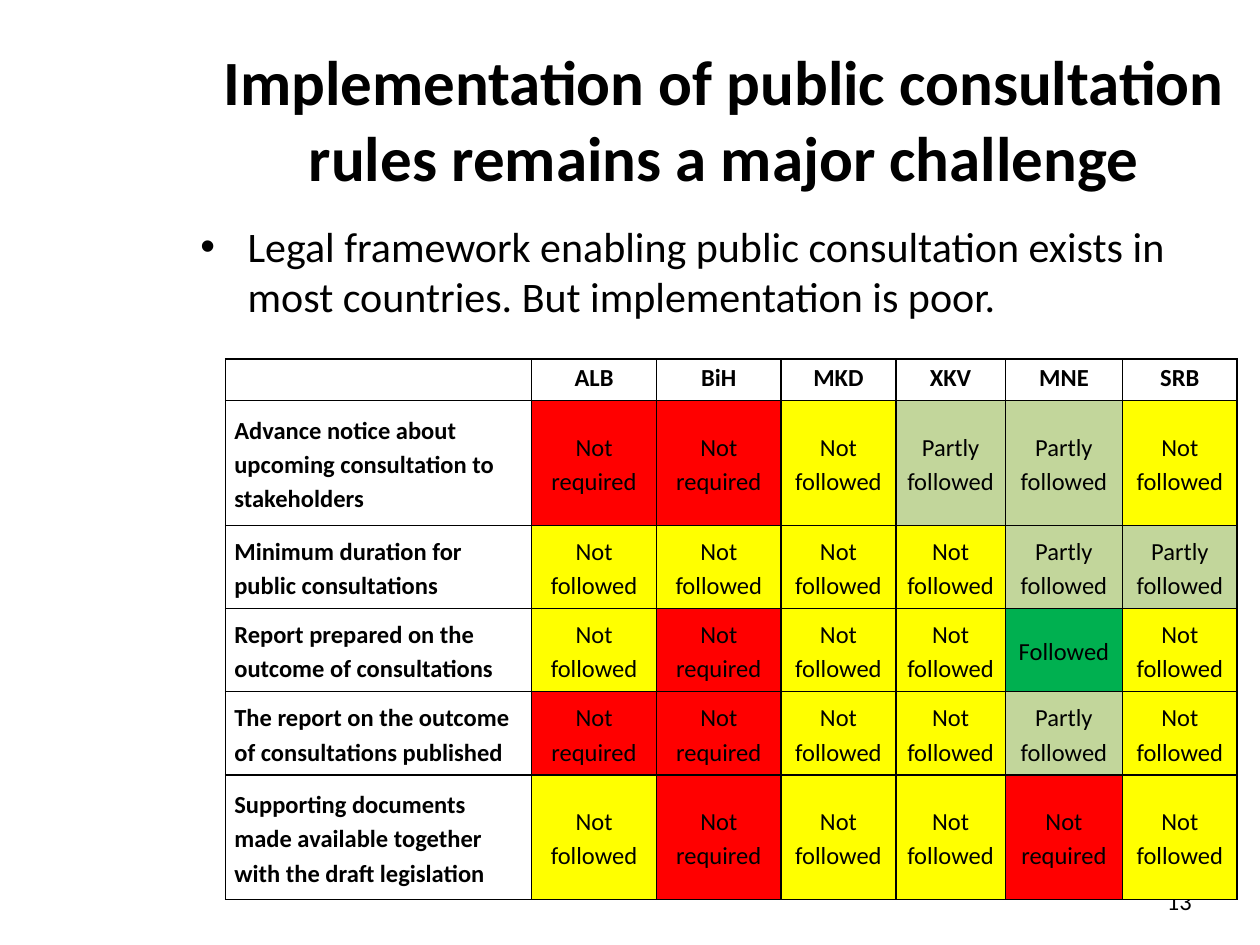
import lxml.etree
import pptx
import pptx.dml.color
import pptx.enum.text
import pptx.oxml.ns
import pptx.util

SCALE = 9144
FONT = "Calibri"
COLORS = {
    "text": "000000",
    "line": "000000",
    "Not required": "FF0000",
    "Not followed": "FFFF00",
    "Partly followed": "C2D69B",
    "Followed": "00B050",
}
STATES = {
    "R": "Not required",
    "N": "Not followed",
    "P": "Partly followed",
    "F": "Followed",
}
LANDS = ["ALB", "BiH", "MKD", "XKV", "MNE", "SRB"]
RULES = [
    ("Advance notice about upcoming consultation to stakeholders", "RRNPPN"),
    ("Minimum duration for public consultations", "NNNNPP"),
    ("Report prepared on the outcome of consultations", "NRNNFN"),
    ("The report on the outcome of consultations published", "RRNNPN"),
    ("Supporting documents made available together with the draft legislation", "NRNNRN"),
]
WIDTHS = [243, 99, 99, 91, 87, 93, 91]
HEIGHTS = [33, 99, 66, 66, 66, 99]
ALIGN = pptx.enum.text.PP_ALIGN
ANCHOR = pptx.enum.text.MSO_ANCHOR


def px(size):
    """Turn px into EMU."""
    return pptx.util.Emu(size * SCALE)


def color(name):
    """Look up a named colour."""
    return pptx.dml.color.RGBColor.from_string(COLORS[name])


def write(frame, text, size, bold=False, align=None):
    """Set the text of a frame and format its run."""
    frame.text = text
    para = frame.paragraphs[0]
    para.alignment = align
    para.space_before = pptx.util.Pt(0)
    for run in para.runs:
        run.font.name = FONT
        run.font.size = pptx.util.Pt(size)
        run.font.bold = bold
        run.font.color.rgb = color("text")
    return para


def place(shape, left, top, width, height):
    """Move and size a shape, with its text wrapped and not shrunk."""
    shape.left, shape.top = px(left), px(top)
    shape.width, shape.height = px(width), px(height)
    shape.text_frame.word_wrap = True
    shape.text_frame.auto_size = pptx.enum.text.MSO_AUTO_SIZE.NONE


def border(cell):
    """Draw a thin line on all four sides of a cell."""
    props = cell._tc.get_or_add_tcPr()
    qn = pptx.oxml.ns.qn
    for side in ("a:lnL", "a:lnR", "a:lnT", "a:lnB"):
        line = lxml.etree.SubElement(props, qn(side), w=str(pptx.util.Pt(1)))
        fill = lxml.etree.SubElement(line, qn("a:solidFill"))
        lxml.etree.SubElement(fill, qn("a:srgbClr"), val=COLORS["line"])


def fill_cell(cell, text, bold, align, anchor):
    """Write one cell and colour it by its state."""
    cell.margin_left = cell.margin_right = px(7)
    cell.margin_top = cell.margin_bottom = 0
    cell.vertical_anchor = anchor
    border(cell)
    if text in COLORS:
        cell.fill.solid()
        cell.fill.fore_color.rgb = color(text)
    else:
        cell.fill.background()
    if text:
        write(cell.text_frame, text, 14, bold, align).line_spacing = 1.15


def add_grid(slide):
    """Add the table of rules by country."""
    rows = [["", *LANDS]]
    rows += [[rule, *(STATES[code] for code in codes)] for rule, codes in RULES]
    frame = slide.shapes.add_table(
        len(rows), len(WIDTHS), px(179), px(285), px(sum(WIDTHS)), px(sum(HEIGHTS))
    )
    table = frame.table
    table.first_row = table.horz_banding = False
    for col, width in zip(table.columns, WIDTHS):
        col.width = px(width)
    for row, height in zip(table.rows, HEIGHTS):
        row.height = px(height)
    for r, row in enumerate(rows):
        for c, text in enumerate(row):
            align = ALIGN.CENTER if c else ALIGN.LEFT
            anchor = ANCHOR.MIDDLE if r else ANCHOR.TOP
            fill_cell(table.cell(r, c), text, r == 0 or c == 0, align, anchor)


def add_page(slide, text):
    """Add the page number."""
    box = slide.shapes.add_textbox(0, 0, 0, 0)
    place(box, 900, 695, 72, 40)
    box.text_frame.vertical_anchor = ANCHOR.MIDDLE
    write(box.text_frame, text, 14, align=ALIGN.CENTER)


def main():
    """Build the slide."""
    deck = pptx.Presentation()
    deck.slide_width, deck.slide_height = px(1000), px(750)
    slide = deck.slides.add_slide(deck.slide_layouts[1])
    title, body = slide.placeholders
    place(title, 149, 29, 851, 125)
    title.text_frame.vertical_anchor = ANCHOR.TOP
    write(
        title.text_frame,
        "Implementation of public consultation rules remains a major challenge",
        36, True, ALIGN.CENTER,
    )
    place(body, 149, 170, 851, 165)
    write(
        body.text_frame,
        "Legal framework enabling public consultation exists in most countries. "
        "But implementation is poor.",
        24,
    )
    add_page(slide, "13")
    add_grid(slide)
    deck.save("out.pptx")


if __name__ == "__main__":
    main()
